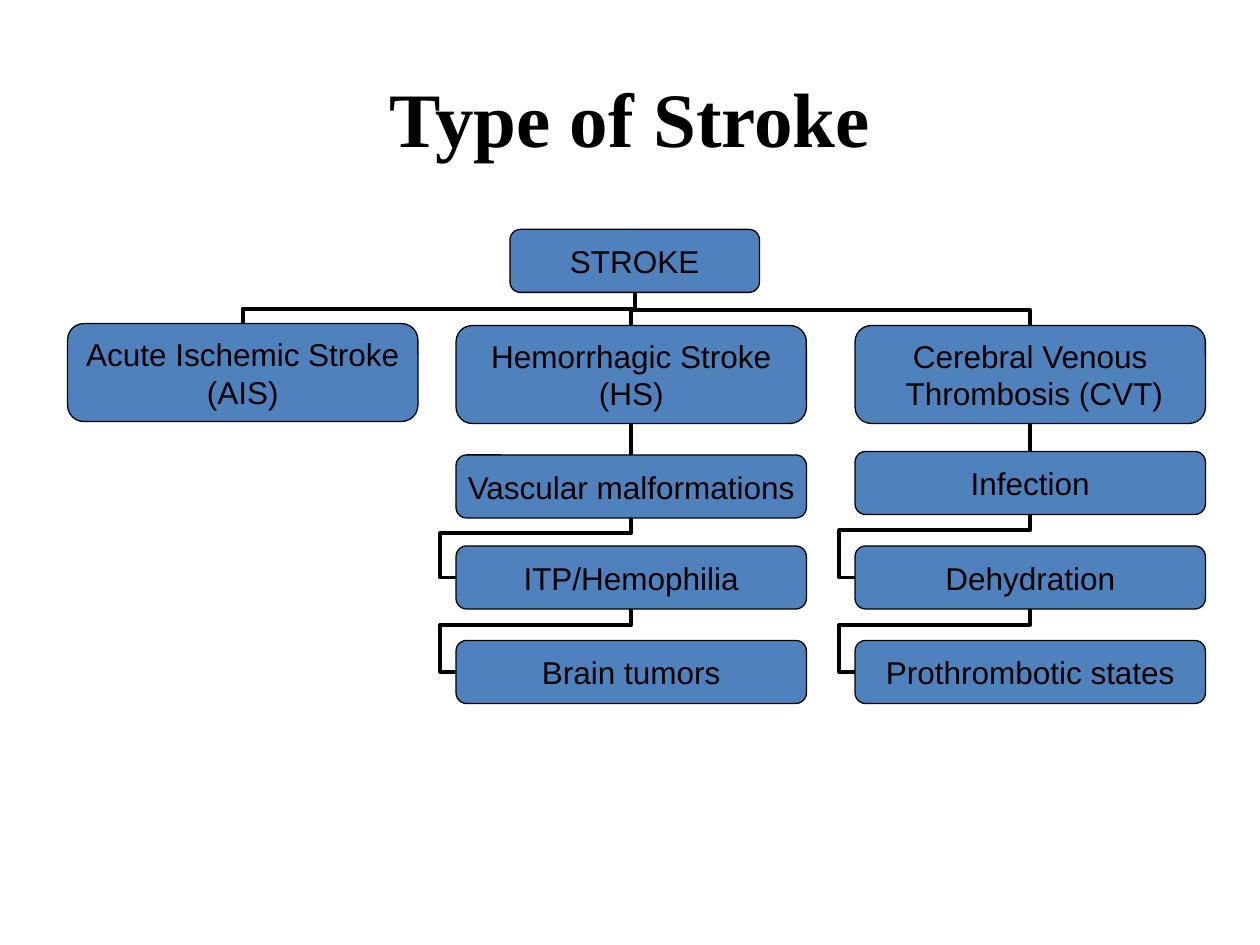
from dataclasses import dataclass
from itertools import pairwise

from lxml.etree import SubElement
from pptx import Presentation
from pptx.dml.color import RGBColor
from pptx.enum.shapes import MSO_CONNECTOR, MSO_SHAPE
from pptx.enum.text import MSO_ANCHOR, PP_ALIGN
from pptx.oxml.ns import qn
from pptx.util import Pt


@dataclass(frozen=True)
class Theme:
    ink: RGBColor = RGBColor(0, 0, 0)
    node_fill: RGBColor = RGBColor(0x4F, 0x81, 0xBD)
    title_font: str = "Times New Roman"
    node_font: str = "Arial"
    title_size: float = 44
    node_size: float = 18
    outline: float = 0.75
    link: float = 2.25


@dataclass(frozen=True)
class Node:
    label: str
    left: float
    top: float
    width: float
    height: float

    @property
    def center(self):
        return self.left + self.width / 2

    @property
    def middle(self):
        return self.top + self.height / 2

    @property
    def bottom(self):
        return self.top + self.height


def write(frame, text, *, font, size, color, bold=False, wrap=False):
    frame.word_wrap = wrap
    frame.vertical_anchor = MSO_ANCHOR.MIDDLE
    for index, line in enumerate(text.split("\n")):
        paragraph = frame.paragraphs[0] if index == 0 else frame.add_paragraph()
        paragraph.alignment = PP_ALIGN.CENTER
        run = paragraph.add_run()
        run.text = line
        run.font.name = font
        run.font.size = Pt(size)
        run.font.bold = bold
        run.font.color.rgb = color


class Chart:
    def __init__(self, slide, theme):
        self.slide = slide
        self.theme = theme

    def title(self, text, left, top, width, height):
        heading = self.slide.shapes.add_textbox(Pt(left), Pt(top), Pt(width), Pt(height))
        write(heading.text_frame, text, font=self.theme.title_font,
              size=self.theme.title_size, color=self.theme.ink, bold=True, wrap=True)

    def node(self, node):
        box = self.slide.shapes.add_shape(
            MSO_SHAPE.ROUNDED_RECTANGLE,
            Pt(node.left), Pt(node.top), Pt(node.width), Pt(node.height))
        box.shadow.inherit = False
        box.fill.solid()
        box.fill.fore_color.rgb = self.theme.node_fill
        box.line.color.rgb = self.theme.ink
        box.line.width = Pt(self.theme.outline)
        write(box.text_frame, node.label, font=self.theme.node_font,
              size=self.theme.node_size, color=self.theme.ink)

    def line(self, x1, y1, x2, y2, kind=MSO_CONNECTOR.STRAIGHT):
        link = self.slide.shapes.add_connector(kind, Pt(x1), Pt(y1), Pt(x2), Pt(y2))
        link.line.color.rgb = self.theme.ink
        link.line.width = Pt(self.theme.link)
        SubElement(link._element.spPr, qn("a:effectLst"))
        return link

    def elbow(self, left, top, width, height, preset, turn, flip, **bends):
        link = self.line(left, top, left + width, top + height, MSO_CONNECTOR.ELBOW)
        properties = link._element.spPr
        frame = properties.find(qn("a:xfrm"))
        frame.set("rot", str(turn * 60000))
        if flip:
            frame.set("flipH", "1")
        geometry = properties.find(qn("a:prstGeom"))
        geometry.set("prst", preset)
        guides = geometry.find(qn("a:avLst"))
        for name, share in bends.items():
            SubElement(guides, qn("a:gd"), name=name, fmla=f"val {round(share * 100000)}")

    def branch_link(self, child, parent):
        rise = child.top - parent.bottom
        run = abs(parent.center - child.center)
        middle_x = (child.center + parent.center) / 2
        middle_y = (child.top + parent.bottom) / 2
        leftward = child.center > parent.center
        self.elbow(middle_x - rise / 2, middle_y - run / 2, rise, run,
                   "bentConnector3", 90 if leftward else 270, leftward,
                   adj1=11.4 / 2.54 * 2 / rise if rise < 18.4 and False else 0.48)

    def side_link(self, child, parent):
        rise = child.middle - parent.bottom
        self.elbow(child.left, parent.bottom, parent.center - child.left, rise,
                   "bentConnector4", 180, True, adj1=-0.09, adj2=0.75)

    def drop_link(self, child, parent):
        self.line(child.center, child.top, parent.center, parent.bottom)


def main():
    deck = Presentation()
    deck.slide_width, deck.slide_height = Pt(720), Pt(540)
    chart = Chart(deck.slides.add_slide(deck.slide_layouts[6]), Theme())
    chart.title("Type of Stroke", 36, 21.6, 648, 90)

    width, branch_height, cause_height, row_step = 200.2, 56, 36, 54
    last_row = 366
    stroke = Node("STROKE", 291.4, 131.1, 142.6, cause_height)
    columns = [
        ("Acute Ischemic Stroke\n(AIS)", 38.6, 184.9, 0, []),
        ("Hemorrhagic Stroke\n(HS)", 260.6, 186, 2,
         ["Vascular malformations", "ITP/Hemophilia", "Brain tumors"]),
        ("Cerebral Venous\n Thrombosis (CVT)", 488.6, 186, 0,
         ["Infection", "Dehydration", "Prothrombotic states"]),
    ]

    nodes = [stroke]
    for label, left, top, first_shift, causes in columns:
        branch = Node(label, left, top, width, branch_height)
        rows = [
            Node(cause, left, last_row - row_step * (len(causes) - 1 - row)
                 + (first_shift if row == 0 else 0), width, cause_height)
            for row, cause in enumerate(causes)
        ]
        chart.branch_link(branch, stroke)
        if rows:
            chart.drop_link(rows[0], branch)
        for parent, child in pairwise(rows):
            chart.side_link(child, parent)
        nodes += [branch, *rows]

    for node in nodes:
        chart.node(node)
    deck.save("out.pptx")


if __name__ == "__main__":
    main()
